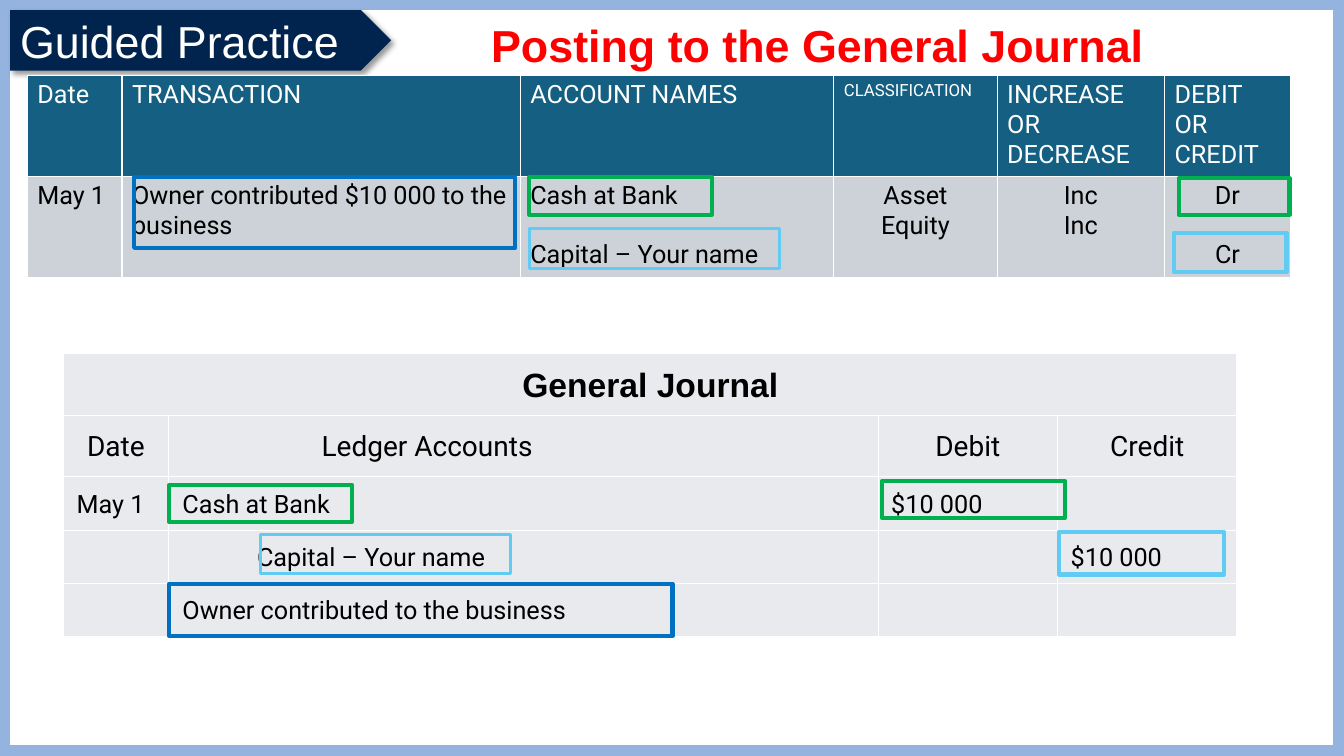
"""Build the guided practice slide on posting to the general journal."""
import dataclasses
import typing

import lxml.etree
import pptx
import pptx.dml.color
import pptx.enum.shapes
import pptx.enum.text
import pptx.oxml
import pptx.oxml.ns
import pptx.util

Inches = pptx.util.Inches
Pt = pptx.util.Pt
Kind = pptx.enum.shapes.MSO_SHAPE
Align = pptx.enum.text.PP_ALIGN
Anchor = pptx.enum.text.MSO_ANCHOR
Box = tuple[float, float, float, float]


@dataclasses.dataclass(frozen=True)
class Theme:
    """Colours, fonts and type sizes of the slide."""
    navy: str = "01244E"
    frame: str = "95B3DF"
    white: str = "FFFFFF"
    black: str = "000000"
    red: str = "FF0000"
    teal: str = "156082"
    grey: str = "CCD2D8"
    pale: str = "E8EAED"
    green: str = "00B050"
    sky: str = "61CBF4"
    blue: str = "0070C0"
    head: str = "Arial"
    body: str = "Roboto"
    title: int = 32
    large: int = 24
    label: int = 20
    text: int = 18
    small: int = 12


T = Theme()


@dataclasses.dataclass(frozen=True)
class Mark:
    """An outlined box that links two entries."""
    box: Box
    tint: str
    width: float = 3


@dataclasses.dataclass(frozen=True)
class Entry:
    """The text and format of one table cell."""
    text: str = ""
    size: int = T.text
    tint: str = T.black
    font: str = T.body
    bold: bool = False
    mid: bool = False
    gap: float = 0
    left: float = 0.1


MARKS = [
    Mark((5.25, 1.76, 1.81, 0.37), T.green),
    Mark((2.58, 5.3, 2.48, 0.39), T.sky, 2.25),
    Mark((1.68, 4.81, 1.81, 0.37), T.green),
    Mark((5.25, 2.27, 2.48, 0.39), T.sky, 2.25),
    Mark((1.33, 1.76, 3.78, 0.7), T.blue),
    Mark((1.68, 5.79, 4.99, 0.52), T.blue),
    Mark((8.75, 4.77, 1.81, 0.37), T.green),
    Mark((11.69, 1.77, 1.1, 0.36), T.green),
    Mark((10.5, 5.28, 1.64, 0.42), T.sky),
    Mark((11.64, 2.31, 1.12, 0.39), T.sky),
]

HEADS = ["Date", "TRANSACTION", "ACCOUNT NAMES", "CLASSIFICATION",
         "INCREASE OR DECREASE", "DEBIT OR CREDIT"]
ANALYSIS = [
    [Entry(head, T.small if head == "CLASSIFICATION" else T.text, T.white)
     for head in HEADS],
    [Entry("May 1"),
     Entry("Owner contributed $10 000 to the business"),
     Entry("Cash at Bank\nCapital – Your name", gap=21),
     Entry("Asset\nEquity", mid=True),
     Entry("Inc\nInc", mid=True),
     Entry("Dr\nCr", mid=True, gap=21)],
]
JOURNAL = [
    [Entry("General Journal", T.large, font=T.head, bold=True, mid=True, left=0.07)],
    [Entry("Date", T.label, mid=True, left=0.07),
     Entry("Ledger Accounts", T.label, left=1.52),
     Entry("Debit", T.label, mid=True, left=0.07),
     Entry("Credit", T.label, mid=True, left=0.07)],
    [Entry("May 1", left=0.13), Entry("Cash at Bank", left=0.14),
     Entry("$10 000", left=0.13), Entry()],
    [Entry(), Entry("Capital – Your name", left=0.88),
     Entry(), Entry("$10 000", left=0.13)],
    [Entry(), Entry("Owner contributed to the business", left=0.14),
     Entry(), Entry()],
]


def rgb(tint: str) -> pptx.dml.color.RGBColor:
    """Turn a hex string into a colour."""
    return pptx.dml.color.RGBColor.from_string(tint)


def place(box: Box) -> list[int]:
    """Turn a box in inches into lengths."""
    return [Inches(side) for side in box]


def write(frame: typing.Any, text: str, *, size: float = T.text, tint: str = T.black,
          font: str = T.body, bold: bool = False, mid: bool = False,
          gap: float = 0, line: float = 1.0) -> None:
    """Fill a text frame, one paragraph to each line of text."""
    frame.word_wrap = True
    for i, part in enumerate(text.split("\n")):
        para = frame.add_paragraph() if i else frame.paragraphs[0]
        para.alignment = Align.CENTER if mid else Align.LEFT
        para.line_spacing = line
        para.space_before = Pt(gap if i else 0)
        run = para.add_run()
        run.text = part
        run.font.size, run.font.name, run.font.bold = Pt(size), font, bold
        run.font.color.rgb = rgb(tint)


def edge(cell: typing.Any, tint: str) -> None:
    """Draw a thin line on each side of a cell."""
    props = cell._tc.get_or_add_tcPr()
    for i, side in enumerate("LRTB"):
        props.insert(i, pptx.oxml.parse_xml(
            f'<a:ln{side} {pptx.oxml.ns.nsdecls("a")} w="12700"><a:solidFill>'
            f'<a:srgbClr val="{tint}"/></a:solidFill></a:ln{side}>'))


def grid(slide: typing.Any, box: Box, cols: list[float], rows: list[float],
         fills: list[str], data: list[list[Entry]], *, tight: bool = False) -> None:
    """Add a table; a row with one entry spans the full width."""
    table = slide.shapes.add_table(len(rows), len(cols), *place(box)).table
    table.first_row = table.horz_banding = False
    for col, width in zip(table.columns, cols):
        col.width = Inches(width)
    for r, line in enumerate(data):
        table.rows[r].height = Inches(rows[r])
        for c in range(len(cols)):
            cell = table.cell(r, c)
            cell.fill.solid()
            cell.fill.fore_color.rgb = rgb(fills[r])
            edge(cell, T.white)
        if len(line) == 1:
            table.cell(r, 0).merge(table.cell(r, len(cols) - 1))
        for c, item in enumerate(line):
            cell = table.cell(r, c)
            cell.margin_left = Inches(item.left)
            if tight:
                cell.vertical_anchor = Anchor.MIDDLE
                cell.margin_top = cell.margin_bottom = 0
                cell.margin_right = Inches(0.07)
            if item.text:
                write(cell.text_frame, item.text, size=item.size, tint=item.tint,
                      font=item.font, bold=item.bold, mid=item.mid, gap=item.gap,
                      line=1.07 if tight else 1.0)


def frame(slide: typing.Any, mark: Mark) -> None:
    """Add an unfilled box with a coloured line."""
    shape = slide.shapes.add_shape(Kind.RECTANGLE, *place(mark.box))
    shape.shadow.inherit = False
    shape.fill.background()
    shape.line.color.rgb = rgb(mark.tint)
    shape.line.width = Pt(mark.width)


def banner(slide: typing.Any) -> None:
    """Add the pointed label with its soft shadow."""
    shape = slide.shapes.add_shape(Kind.PENTAGON, *place((0.1, 0.1, 3.78, 0.6)))
    shape.fill.solid()
    shape.fill.fore_color.rgb = rgb(T.navy)
    shape.line.fill.background()
    shape.shadow.inherit = False
    glow = shape._element.spPr.find(pptx.oxml.ns.qn("a:effectLst"))
    cast = lxml.etree.SubElement(
        glow, pptx.oxml.ns.qn("a:outerShdw"), blurRad=str(Pt(4)), dist=str(Pt(3)),
        dir="2700000", algn="tl", rotWithShape="0")
    tone = lxml.etree.SubElement(cast, pptx.oxml.ns.qn("a:srgbClr"), val=T.black)
    lxml.etree.SubElement(tone, pptx.oxml.ns.qn("a:alpha"), val="40000")
    shape.text_frame.vertical_anchor = Anchor.MIDDLE
    write(shape.text_frame, "Guided Practice", size=T.title, tint=T.white, font=T.head)


def main() -> None:
    """Build and save the slide."""
    deck = pptx.Presentation()
    deck.slide_width, deck.slide_height = Inches(13.33), Inches(7.5)
    slide = deck.slides.add_slide(deck.slide_layouts[6])
    frame(slide, Mark((0, 0, 13.33, 7.5), T.frame, 15))
    banner(slide)
    grid(slide, (0.27, 0.75, 12.54, 2), [0.94, 3.95, 3.11, 1.62, 1.66, 1.25],
         [1, 1], [T.teal, T.grey], ANALYSIS)
    grid(slide, (0.63, 3.51, 11.63, 2.8), [1.04, 7.04, 1.78, 1.78],
         [0.61] * 2 + [0.53] * 3, [T.pale] * 5, JOURNAL, tight=True)
    for mark in MARKS:
        frame(slide, mark)
    title = slide.shapes.add_textbox(*place((3.7, 0.19, 8.82, 0.59)))
    write(title.text_frame, "Posting to the General Journal", size=T.title,
          tint=T.red, font=T.head, bold=True, mid=True, line=0.9)
    deck.save("out.pptx")


if __name__ == "__main__":
    main()
